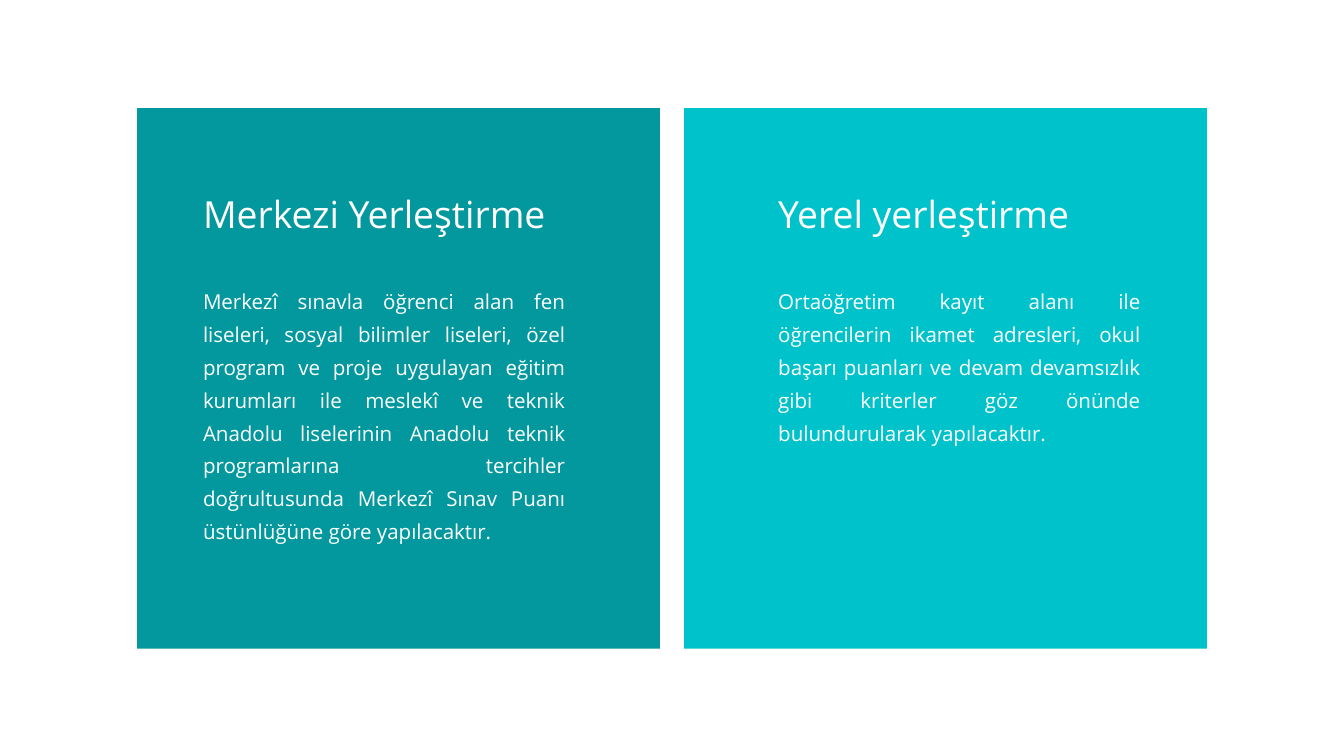
from dataclasses import dataclass

import pptx
import pptx.dml.color
import pptx.enum.shapes
import pptx.enum.text
import pptx.slide
import pptx.util

Pt = pptx.util.Pt
Align = pptx.enum.text.PP_ALIGN


@dataclass(frozen=True)
class Theme:
    font: str = "Open Sans"
    text: str = "FFFFFF"
    teal: str = "03989E"
    turquoise: str = "00C2CB"
    title_size: float = 40
    title_spacing: float = 60
    body_size: float = 22
    body_spacing: float = 35.2


@dataclass(frozen=True)
class Panel:
    fill: str
    text_left: float
    title: str
    title_width: float
    body: str
    body_height: float


THEME = Theme()

# Layout in points
PAGE_WIDTH, PAGE_HEIGHT = 1440, 810
PANEL_WIDTH, PANEL_HEIGHT = 560.2, 579
PANEL_TOP = 115.9
PANEL_GAP = 25.9
FIRST_LEFT = (PAGE_WIDTH - 2 * PANEL_WIDTH - PANEL_GAP) / 2
TITLE_TOP, TITLE_HEIGHT = 193, 57.6
BODY_TOP, BODY_WIDTH = 301, 388.1

PANELS = [
    Panel(
        THEME.teal, 217.5, "Merkezi Yerleştirme", 418.3,
        "Merkezî sınavla öğrenci alan fen liseleri, sosyal bilimler liseleri, "
        "özel program ve proje uygulayan eğitim kurumları ile meslekî ve teknik "
        "Anadolu liselerinin Anadolu teknik programlarına tercihler "
        "doğrultusunda Merkezî Sınav Puanı üstünlüğüne göre yapılacaktır.",
        276.5,
    ),
    Panel(
        THEME.turquoise, 833.8, "Yerel yerleştirme", 388.1,
        "Ortaöğretim kayıt alanı ile öğrencilerin ikamet adresleri, okul "
        "başarı puanları ve devam devamsızlık gibi kriterler göz önünde "
        "bulundurularak yapılacaktır.",
        172.1,
    ),
]


def color(value: str) -> pptx.dml.color.RGBColor:
    return pptx.dml.color.RGBColor.from_string(value)


def add_text(page: pptx.slide.Slide, text: str, left: float, top: float,
             width: float, height: float, size: float, spacing: float,
             align: Align) -> None:
    box = page.shapes.add_textbox(Pt(left), Pt(top), Pt(width), Pt(height))
    frame = box.text_frame
    frame.margin_left = frame.margin_right = 0
    frame.margin_top = frame.margin_bottom = 0
    frame.word_wrap = True
    frame.auto_size = pptx.enum.text.MSO_AUTO_SIZE.SHAPE_TO_FIT_TEXT
    frame.text = text
    para = frame.paragraphs[0]
    para.alignment = align
    para.line_spacing = Pt(spacing)
    span = para.runs[0]
    span.font.name = THEME.font
    span.font.size = Pt(size)
    span.font.color.rgb = color(THEME.text)


def add_panel(page: pptx.slide.Slide, panel: Panel, left: float) -> None:
    # Coloured background
    box = page.shapes.add_shape(
        pptx.enum.shapes.MSO_SHAPE.RECTANGLE,
        Pt(left), Pt(PANEL_TOP), Pt(PANEL_WIDTH), Pt(PANEL_HEIGHT))
    box.shadow.inherit = False
    box.fill.solid()
    box.fill.fore_color.rgb = color(panel.fill)
    box.line.fill.background()

    # Title and description
    add_text(page, panel.title, panel.text_left, TITLE_TOP, panel.title_width,
             TITLE_HEIGHT, THEME.title_size, THEME.title_spacing, Align.LEFT)
    add_text(page, panel.body, panel.text_left, BODY_TOP, BODY_WIDTH,
             panel.body_height, THEME.body_size, THEME.body_spacing,
             Align.JUSTIFY)


def main() -> None:
    deck = pptx.Presentation()
    deck.slide_width, deck.slide_height = Pt(PAGE_WIDTH), Pt(PAGE_HEIGHT)
    page = deck.slides.add_slide(deck.slide_layouts[6])

    # Two panels side by side, centred on the page
    for index, panel in enumerate(PANELS):
        add_panel(page, panel, FIRST_LEFT + index * (PANEL_WIDTH + PANEL_GAP))

    deck.save("out.pptx")


if __name__ == "__main__":
    main()
